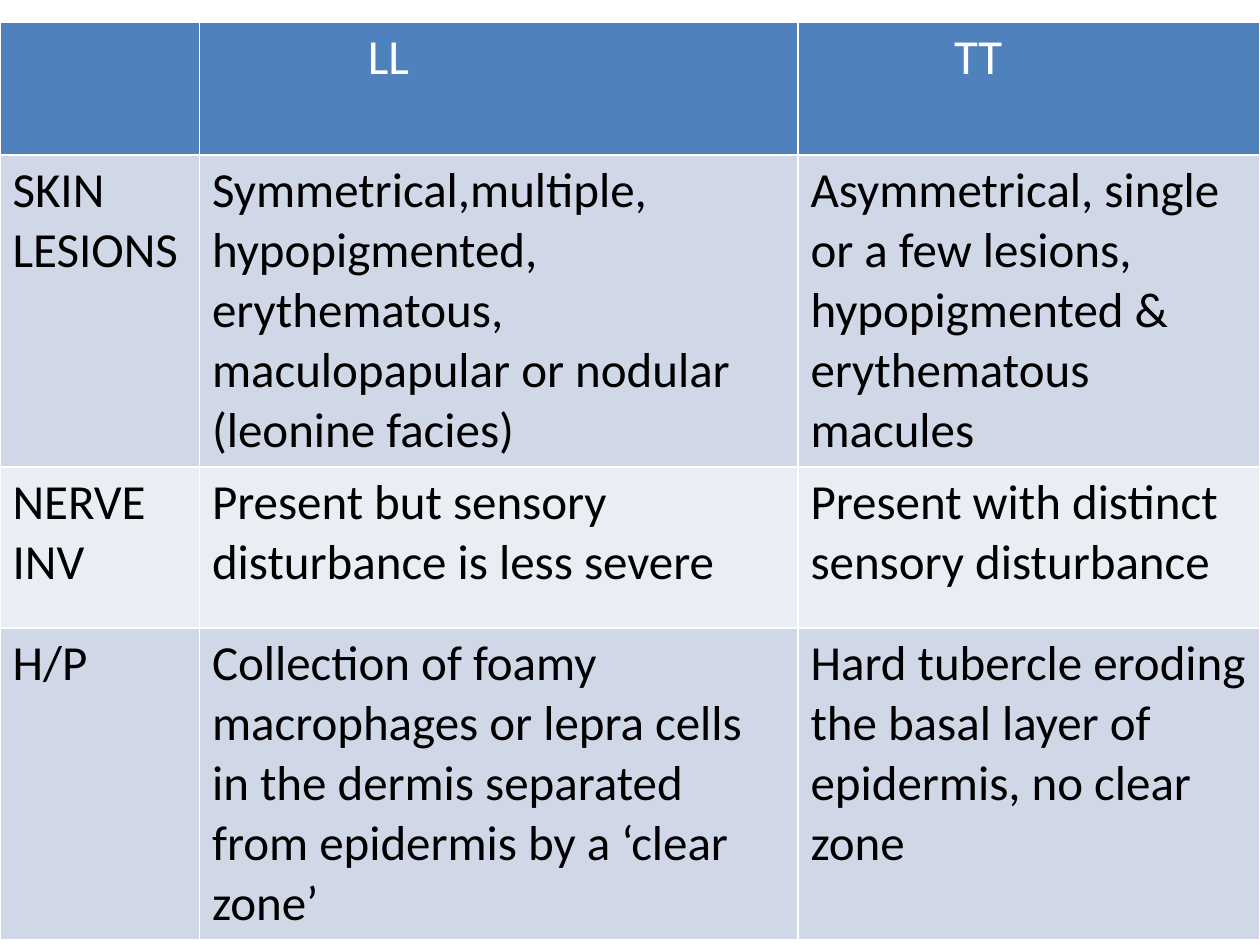
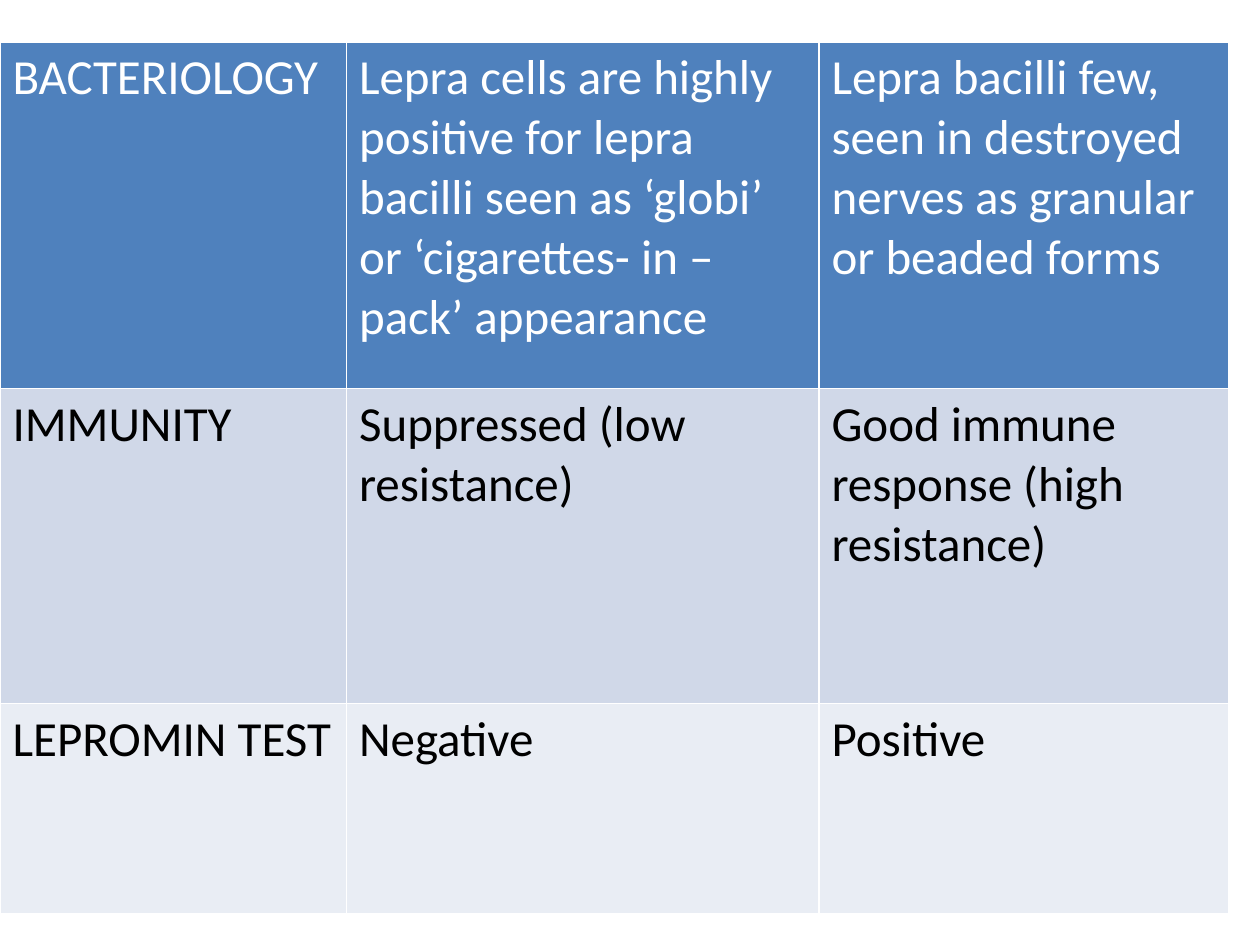
from pptx import Presentation
from pptx.dml.color import RGBColor
from pptx.util import Pt

FONT, SIZE = "Calibri", 28
HEADER_FILL, HEADER_TEXT = "4F81BD", "FFFFFF"
BAND_FILLS, BODY_TEXT = ("D0D8E8", "E9EDF4"), "000000"

# Each slide: table position, column widths, row heights, cell texts,
# and left indents for the header texts
SKIN_TO_HISTOLOGY = dict(
    left=0, top=12.5,
    widths=(114, 342, 264),
    heights=(76, 178, 92, 178),
    indents=(0, 89, 82),
    rows=(
        ("", "LL", "TT"),
        ("SKIN\nLESIONS",
         "Symmetrical,multiple, hypopigmented, erythematous, "
         "maculopapular or nodular (leonine facies)",
         "Asymmetrical, single or a few lesions, hypopigmented & "
         "erythematous macules"),
        ("NERVE\nINV",
         "Present but sensory disturbance is less severe",
         "Present with distinct sensory disturbance"),
        ("H/P",
         "Collection of foamy macrophages or lepra cells in the dermis "
         "separated from epidermis by a ‘clear zone’",
         "Hard tubercle eroding the basal layer of epidermis, no clear zone"),
    ),
)
BACTERIOLOGY_TO_LEPROMIN = dict(
    left=0, top=24,
    widths=(198, 270, 234),
    heights=(198, 180, 120),
    indents=(0, 0, 0),
    rows=(
        ("BACTERIOLOGY",
         "Lepra cells are highly positive for lepra bacilli seen as ‘globi’ "
         "or ‘cigarettes- in – pack’ appearance",
         "Lepra bacilli few, seen in destroyed nerves as granular or "
         "beaded forms"),
        ("IMMUNITY", "Suppressed (low resistance)",
         "Good immune response (high resistance)"),
        ("LEPROMIN TEST", "Negative", "Positive"),
    ),
)


def rgb(value):
    return RGBColor.from_string(value)


def write(tf, text, color=BODY_TEXT, size=SIZE, bold=False):
    """Write text into a frame, one paragraph per line."""
    tf.text = text
    for p in tf.paragraphs:
        p.font.size = Pt(size)
        for r in p.runs:
            r.font.name, r.font.size, r.font.bold = FONT, Pt(size), bold
            r.font.color.rgb = rgb(color)


def comparison_table(slide, left, top, widths, heights, indents, rows):
    """Header row over alternating bands; the table style draws white rules."""
    table = slide.shapes.add_table(
        len(rows), len(widths), Pt(left), Pt(top),
        Pt(sum(widths)), Pt(sum(heights))).table
    for column, width in zip(table.columns, widths):
        column.width = Pt(width)
    for i, (row, height, texts) in enumerate(zip(table.rows, heights, rows)):
        row.height = Pt(height)
        header = i == 0
        fill = HEADER_FILL if header else BAND_FILLS[(i - 1) % 2]
        for cell, text, indent in zip(row.cells, texts, indents):
            cell.fill.solid()
            cell.fill.fore_color.rgb = rgb(fill)
            if header and indent:
                cell.margin_left += Pt(indent)
            write(cell.text_frame, text,
                  color=HEADER_TEXT if header else BODY_TEXT)


def main():
    prs = Presentation()
    prs.slide_width, prs.slide_height = Pt(720), Pt(540)
    blank = prs.slide_layouts[6]
    for content in (SKIN_TO_HISTOLOGY, BACTERIOLOGY_TO_LEPROMIN):
        comparison_table(prs.slides.add_slide(blank), **content)
    prs.save("out.pptx")


if __name__ == "__main__":
    main()
